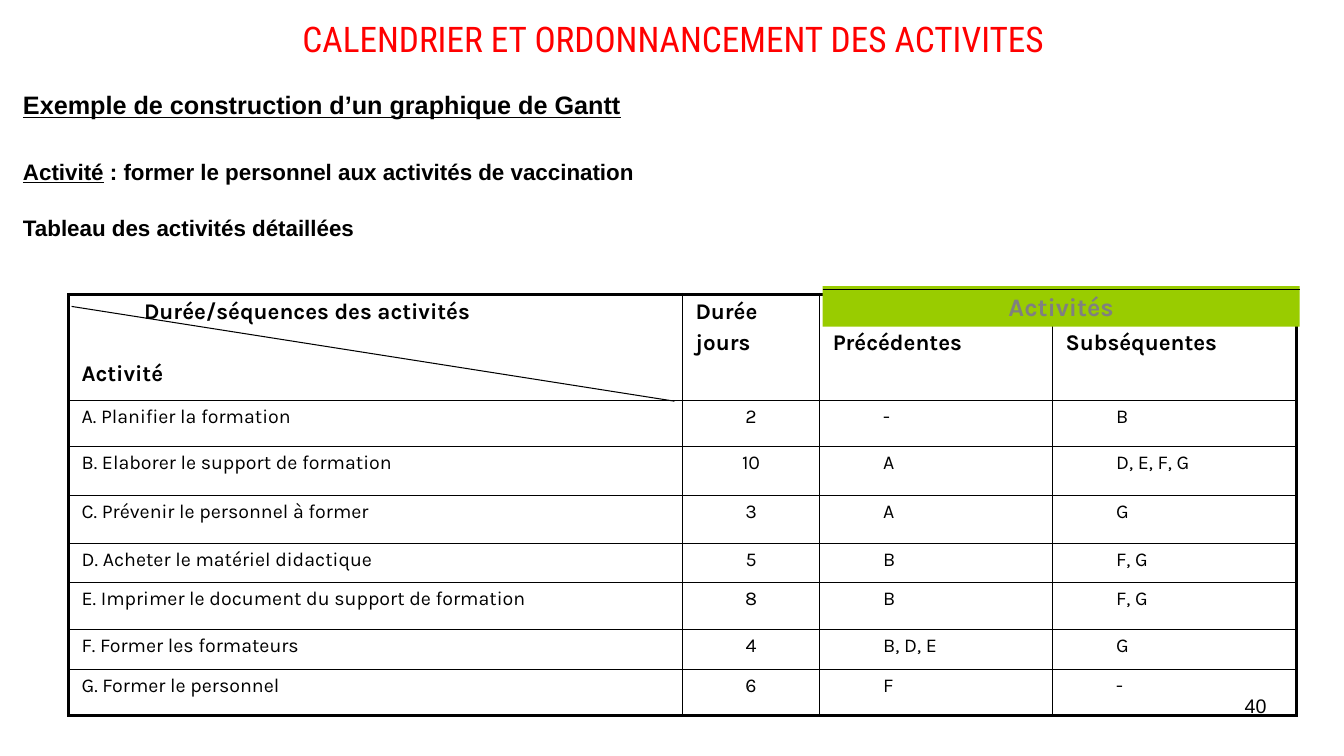
import pptx
import pptx.chart.data
import pptx.dml.color
import pptx.enum.shapes
import pptx.enum.text
import pptx.oxml
import pptx.oxml.ns
import pptx.util

Inches = pptx.util.Inches
Pt = pptx.util.Pt
ALIGN = pptx.enum.text.PP_ALIGN
ANCHOR = pptx.enum.text.MSO_ANCHOR

COLORS = {"ink": "000000", "title": "FF0000", "band": "99CC00", "label": "808080"}
TITLE = "CALENDRIER ET ORDONNANCEMENT DES ACTIVITES"
INTRO = [
    ([("Exemple de construction d’un graphique de Gantt", True)], 18, 0),
    ([("Activité", True), (" : former le personnel aux activités de vaccination", False)], 16, 27),
    ([("Tableau des activités détaillées", False)], 16, 21),
]
HEADS = [
    "Durée/séquences des activités\nActivité",
    "Durée\njours",
    "Précédentes",
    "Subséquentes",
]
TASKS = [
    ("A. Planifier la formation", "2", "-", "B"),
    ("B. Elaborer le support de formation", "10", "A", "D, E, F, G"),
    ("C. Prévenir le personnel à former", "3", "A", "G"),
    ("D. Acheter le matériel didactique", "5", "B", "F, G"),
    ("E. Imprimer le document du support de formation", "8", "B", "F, G"),
    ("F. Former les formateurs", "4", "B, D, E", "G"),
    ("G. Former le personnel", "6", "F", "-"),
]
WIDTHS = [6.09, 1.36, 2.31, 2.42]
HEIGHTS = [1.05, 0.46, 0.49, 0.47, 0.39, 0.47, 0.39, 0.46]
LINES = [(8.16, 2.87, 12.89, 2.87), (0.71, 3.04, 6.69, 3.98)]


def paint(name):
    return pptx.dml.color.RGBColor.from_string(COLORS[name])


def style(par, size, face, color="ink", bold=False, align=ALIGN.LEFT):
    par.alignment = align
    for run in par.runs:
        run.font.size = Pt(size)
        run.font.name = face
        run.font.bold = bold
        run.font.color.rgb = paint(color)


def add_text(slide, box, text=""):
    frame = slide.shapes.add_textbox(*map(Inches, box)).text_frame
    frame.word_wrap = True
    frame.text = text
    return frame


def indent(par, size):
    props = par._p.get_or_add_pPr()
    props.set("marL", str(Inches(size)))
    props.set("indent", "0")


def set_edges(cell, row, col):
    props = cell._tc.get_or_add_tcPr()
    outer = [col == 0, col == len(WIDTHS) - 1, row == 0, row == len(TASKS)]
    for spot, (side, thick) in enumerate(zip("LRTB", outer)):
        width = Pt(2.25 if thick else 1)
        edge = pptx.oxml.parse_xml(
            f'<a:ln{side} {pptx.oxml.ns.nsdecls("a")} w="{width}"><a:solidFill>'
            f'<a:srgbClr val="{COLORS["ink"]}"/></a:solidFill></a:ln{side}>'
        )
        props.insert(spot, edge)


def fill_cell(cell, text, row, col):
    cell.text = text
    cell.margin_left = cell.margin_right = Inches(0.13)
    cell.margin_top = cell.margin_bottom = Inches(0.05)
    cell.fill.background()
    set_edges(cell, row, col)
    head = row == 0
    align = ALIGN.CENTER if col == 1 and not head else ALIGN.LEFT
    for par in cell.text_frame.paragraphs:
        style(par, 16 if head else 14, "Karla", bold=head, align=align)
        par.space_before = Pt(3.2 if head else 2.8)
    if head and col == 0:
        indent(cell.text_frame.paragraphs[0], 0.62)
        cell.text_frame.paragraphs[1].space_before = Pt(25)
    elif head and col > 1:
        cell.margin_top = Inches(0.35)
    elif col > 1:
        indent(cell.text_frame.paragraphs[0], 0.5)


def add_intro(slide):
    frame = add_text(slide, (0.13, 0.84, 12.76, 1.9))
    for spot, (parts, size, gap) in enumerate(INTRO):
        par = frame.add_paragraph() if spot else frame.paragraphs[0]
        for text, under in parts:
            run = par.add_run()
            run.text = text
            run.font.underline = under
        style(par, size, "Arial", bold=True)
        par.space_before = Pt(gap)


def add_grid(slide):
    rows = [HEADS] + TASKS
    box = (0.68, 2.92, sum(WIDTHS), sum(HEIGHTS))
    grid = slide.shapes.add_table(len(rows), len(WIDTHS), *map(Inches, box)).table
    grid.first_row = grid.horz_banding = False
    for col, width in zip(grid.columns, WIDTHS):
        col.width = Inches(width)
    for row, height in zip(grid.rows, HEIGHTS):
        row.height = Inches(height)
    for row, texts in enumerate(rows):
        for col, text in enumerate(texts):
            fill_cell(grid.cell(row, col), text, row, col)


def add_band(slide):
    kind = pptx.enum.shapes.MSO_SHAPE.RECTANGLE
    band = slide.shapes.add_shape(kind, *map(Inches, (8.16, 2.84, 4.73, 0.4)))
    band.shadow.inherit = False
    band.fill.solid()
    band.fill.fore_color.rgb = paint("band")
    band.line.fill.background()
    band.text_frame.text = "Activités"
    band.text_frame.vertical_anchor = ANCHOR.TOP
    style(band.text_frame.paragraphs[0], 18, "Karla", "label", True, ALIGN.CENTER)


def add_line(slide, ends):
    kind = pptx.enum.shapes.MSO_CONNECTOR.STRAIGHT
    line = slide.shapes.add_connector(kind, *map(Inches, ends))
    line.line.color.rgb = paint("ink")
    line.line.width = Pt(0.75)
    plain = pptx.oxml.parse_xml(f'<a:effectLst {pptx.oxml.ns.nsdecls("a")}/>')
    line._element.spPr.append(plain)


def main():
    deck = pptx.Presentation()
    deck.slide_width = Inches(13.33)
    deck.slide_height = Inches(7.5)
    slide = deck.slides.add_slide(deck.slide_layouts[6])
    title = add_text(slide, (0.68, 0.13, 12, 0.5), TITLE)
    title.vertical_anchor = ANCHOR.MIDDLE
    style(title.paragraphs[0], 25.2, "Roboto Condensed", "title", align=ALIGN.CENTER)
    add_intro(slide)
    add_grid(slide)
    number = add_text(slide, (9.55, 6.83, 3.11, 0.52), "40")
    style(number.paragraphs[0], 14, "Arial", align=ALIGN.RIGHT)
    add_band(slide)
    for ends in LINES:
        add_line(slide, ends)
    deck.save("out.pptx")


if __name__ == "__main__":
    main()
